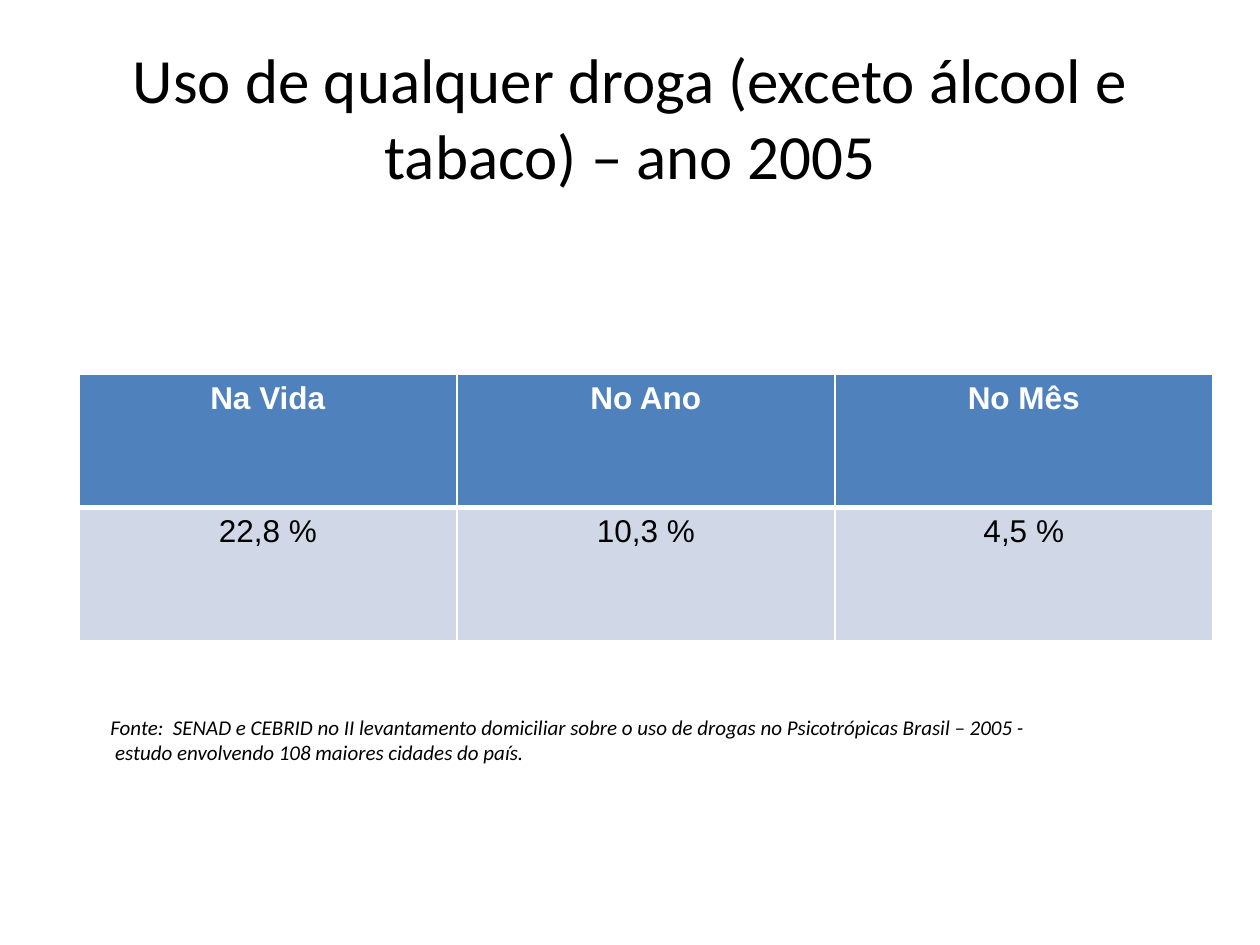
from lxml.etree import SubElement
from pptx import Presentation
from pptx.dml.color import RGBColor
from pptx.enum.text import MSO_ANCHOR as Anchor, PP_ALIGN as Align
from pptx.oxml import parse_xml
from pptx.oxml.ns import nsdecls, qn
from pptx.util import Pt

COLORS = {"text": "000000", "light": "FFFFFF", "header": "4F81BD", "band": "D0D8E8"}
ROWS = [["Na Vida", "No Ano", "No Mês"], ["22,8 %", "10,3 %", "4,5 %"]]
SOURCE_LINES = [
    "Fonte:  SENAD e CEBRID no II levantamento domiciliar sobre o uso de drogas no Psicotrópicas Brasil – 2005 -",
    " estudo envolvendo 108 maiores cidades do país.",
]


def color(name):
    return RGBColor.from_string(COLORS[name])


def add_span(para, text, size, font="Calibri", tone="text", bold=False, italic=False):
    span = para.add_run()
    span.text = text
    span.font.name, span.font.size = font, Pt(size)
    span.font.bold, span.font.italic = bold, italic
    span.font.color.rgb = color(tone)


def add_title(page, text):
    title = page.shapes.title
    title.left, title.top, title.width, title.height = Pt(36), Pt(21.6), Pt(648), Pt(90)
    title.text_frame.word_wrap = True
    title.text_frame.vertical_anchor = Anchor.MIDDLE
    para = title.text_frame.paragraphs[0]
    para.alignment = Align.CENTER
    add_span(para, text, 36)


def set_borders(cell, bottom):
    """Draw white cell borders, with the bottom width given in points."""
    props = cell._tc.get_or_add_tcPr()
    widths = {"lnL": 1, "lnR": 1, "lnT": 1, "lnB": bottom}
    for position, (side, width) in enumerate(widths.items()):
        line = parse_xml(f'<a:{side} {nsdecls("a")} w="{Pt(width)}"/>')
        fill = SubElement(line, qn("a:solidFill"))
        SubElement(fill, qn("a:srgbClr"), val=COLORS["light"])
        props.insert(position, line)


def add_usage_table(page, rows):
    frame = page.shapes.add_table(len(rows), len(rows[0]), Pt(45), Pt(214), Pt(648), Pt(152))
    table = frame.table
    for row_index, values in enumerate(rows):
        header = row_index == 0
        for column, value in enumerate(values):
            cell = table.cell(row_index, column)
            cell.fill.solid()
            cell.fill.fore_color.rgb = color("header" if header else "band")
            set_borders(cell, 3 if header else 1)
            para = cell.text_frame.paragraphs[0]
            para.alignment = Align.CENTER
            add_span(para, value, 18, "Arial", "light" if header else "text", bold=header)


def add_source_note(page, lines):
    box = page.shapes.add_textbox(Pt(56), Pt(404.6), Pt(557), Pt(58))
    box.text_frame.word_wrap = False
    for index, line in enumerate(lines):
        para = box.text_frame.add_paragraph() if index else box.text_frame.paragraphs[0]
        para.alignment = Align.LEFT
        add_span(para, line, 12, italic=True)


def main():
    deck = Presentation()
    deck.slide_width, deck.slide_height = Pt(720), Pt(540)
    page = deck.slides.add_slide(deck.slide_layouts[5])  # title only
    add_title(page, "Uso de qualquer droga (exceto álcool e tabaco) – ano 2005")
    add_usage_table(page, ROWS)
    add_source_note(page, SOURCE_LINES)
    deck.save("out.pptx")


if __name__ == "__main__":
    main()
